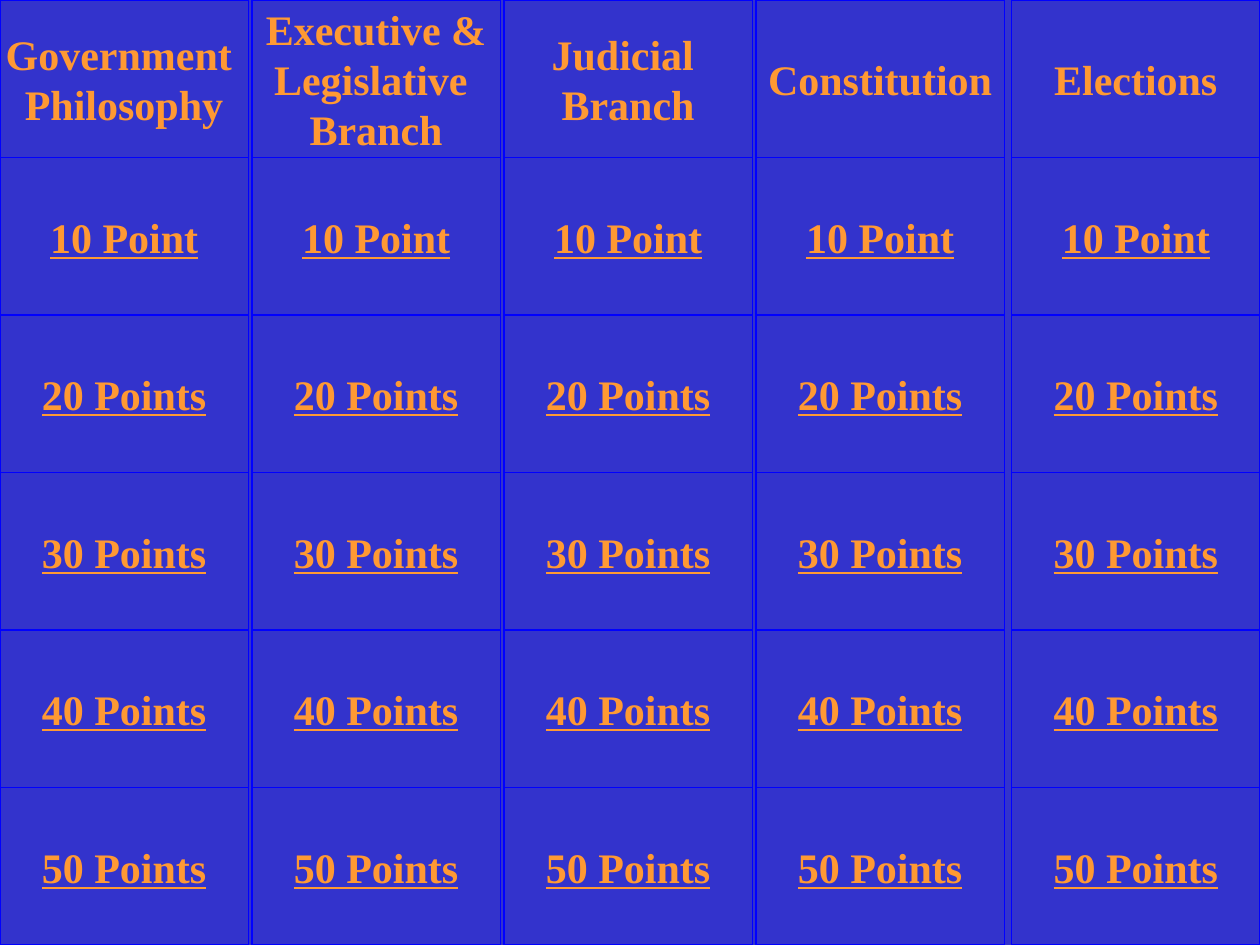
from pptx import Presentation
from pptx.dml.color import RGBColor
from pptx.enum.shapes import MSO_SHAPE
from pptx.enum.text import MSO_ANCHOR, PP_ALIGN
from pptx.util import Inches, Pt

BOARD_BLUE = RGBColor(0x33, 0x33, 0xCC)
BORDER_BLUE = RGBColor(0x00, 0x00, 0xFF)
ORANGE = RGBColor(0xFF, 0x99, 0x33)

CATEGORIES = [
    ["Government ", "Philosophy"],
    ["Executive &", "Legislative ", "Branch"],
    ["Judicial ", "Branch"],
    ["Constitution"],
    ["Elections"],
]
POINTS = ["10 Point", "20 Points", "30 Points", "40 Points", "50 Points"]
COLUMN_LEFTS = [0, 2, 4, 6, 8.03]  # the last column sits flush right
BUTTON_WIDTH = 1.97
BUTTON_HEIGHT = 1.25

presentation = Presentation()
presentation.slide_width = Inches(10)
presentation.slide_height = Inches(7.5)
slide = presentation.slides.add_slide(presentation.slide_layouts[6])
slide.background.fill.solid()
slide.background.fill.fore_color.rgb = BOARD_BLUE

# Game board: a category heading above five point buttons in each column
for left, category in zip(COLUMN_LEFTS, CATEGORIES):
    column = [category] + [[points] for points in POINTS]
    for row, lines in enumerate(column):
        button = slide.shapes.add_shape(
            MSO_SHAPE.ACTION_BUTTON_CUSTOM,
            Inches(left), Inches(row * BUTTON_HEIGHT),
            Inches(BUTTON_WIDTH), Inches(BUTTON_HEIGHT))
        button.shadow.inherit = False
        button.fill.solid()
        button.fill.fore_color.rgb = BOARD_BLUE
        button.line.color.rgb = BORDER_BLUE
        button.line.width = Pt(0.75)

        # Button text, underlined on the point buttons only
        text_frame = button.text_frame
        text_frame.word_wrap = False
        text_frame.vertical_anchor = MSO_ANCHOR.MIDDLE
        for index, line in enumerate(lines):
            paragraph = text_frame.add_paragraph() if index else text_frame.paragraphs[0]
            paragraph.alignment = PP_ALIGN.CENTER
            run = paragraph.add_run()
            run.text = line
            run.font.name = "Times New Roman"
            run.font.size = Pt(24)
            run.font.bold = True
            run.font.underline = row > 0
            run.font.color.rgb = ORANGE

presentation.save("out.pptx")
